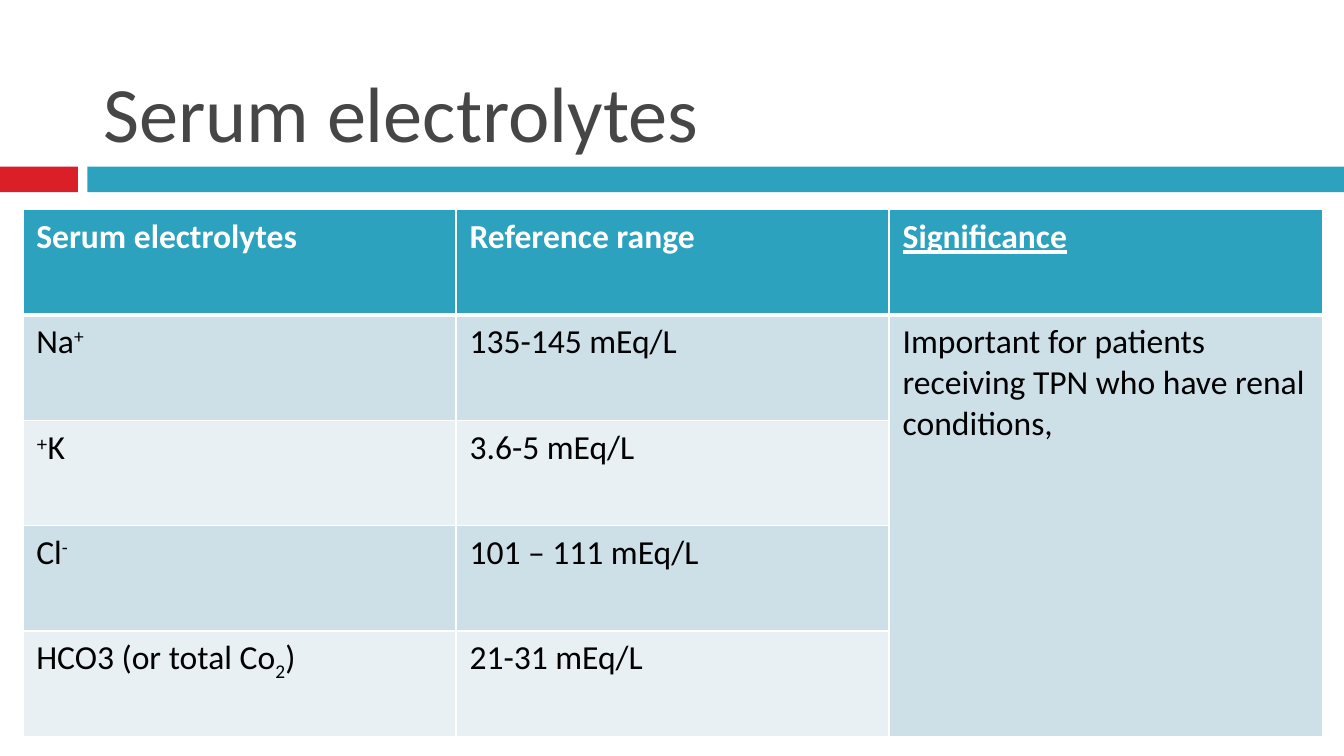
"""Build the serum electrolytes slide with its reference table."""
from lxml import etree
from pptx import Presentation
from pptx.dml.color import RGBColor
from pptx.enum import shapes, text
from pptx.oxml import ns
from pptx.util import Inches, Pt

THEME = {
    "font": "Calibri", "title": 42, "body": 18,
    "red": "DA1F28", "teal": "2DA2BF", "gray": "464646",
    "white": "FFFFFF", "black": "000000",
    "bands": ("CDE0E8", "E8F0F4"),
}
SUP, SUB = 30000, -25000
TITLE = "Serum electrolytes"
HEAD = ["Serum electrolytes", "Reference range", "Significance"]
ROWS = [
    ([("Na", 0), ("+", SUP)], "135-145 mEq/L"),
    ([("K", 0), ("+", SUP)], "3.6-5 mEq/L"),
    ([("Cl", 0), ("-", SUP)], "101 – 111 mEq/L"),
    ([("HCO3 (or total Co", 0), ("2", SUB), (")", 0)], "21-31 mEq/L"),
]
RTL_ROW = 2
NOTE = "Important for patients receiving TPN who have renal conditions,"
BARS = [(0, 0.58, "red"), (0.65, 9.35, "teal")]
TABLE = (0.17, 1.56, 9.67, 3.92)


def rgb(hue):
    return RGBColor.from_string(hue)


def style(run, size, hue, bold=False):
    font = run.font
    font.name, font.size, font.bold = THEME["font"], Pt(size), bold
    font.color.rgb = rgb(hue)


def edge(cell, side, width):
    line = etree.SubElement(cell._tc.get_or_add_tcPr(), ns.qn("a:ln" + side),
                            w=str(Pt(width)))
    fill = etree.SubElement(line, ns.qn("a:solidFill"))
    etree.SubElement(fill, ns.qn("a:srgbClr"), val=THEME["white"])


def put(cell, parts, fill, hue, top, low, bold=False):
    para = cell.text_frame.paragraphs[0]
    for word, base in parts:
        run = para.add_run()
        run.text = word
        style(run, THEME["body"], hue, bold)
        if base:
            run.font._element.set("baseline", str(base))
    for side, width in zip("LRTB", (1, 1, top, low)):
        edge(cell, side, width)
    cell.fill.solid()
    cell.fill.fore_color.rgb = rgb(fill)
    return para


def add_bars(slide):
    for left, width, hue in BARS:
        bar = slide.shapes.add_shape(
            shapes.MSO_SHAPE.RECTANGLE, Inches(left), Inches(1.24),
            Inches(width), Inches(0.19))
        bar.shadow.inherit = False
        bar.fill.solid()
        bar.fill.fore_color.rgb = rgb(THEME[hue])
        bar.line.fill.background()


def add_title(slide):
    box = slide.shapes.add_textbox(*map(Inches, (0.67, 0.13, 8.92, 1.1)))
    frame = box.text_frame
    frame.word_wrap = True
    frame.vertical_anchor = text.MSO_ANCHOR.BOTTOM
    frame.text = TITLE
    style(frame.paragraphs[0].runs[0], THEME["title"], THEME["gray"])


def add_grid(slide):
    count = len(ROWS) + 1
    grid = slide.shapes.add_table(count, len(HEAD), *map(Inches, TABLE)).table
    for col, word in enumerate(HEAD):
        para = put(grid.cell(0, col), [(word, 0)], THEME["teal"],
                   THEME["white"], 1, 3, True)
        para.runs[0].font.underline = word == HEAD[-1]
    for row, (ion, span) in enumerate(ROWS, 1):
        note = [(NOTE, 0)] if row == 1 else []
        band = THEME["bands"][(row - 1) % 2]
        for col, parts in enumerate((ion, [(span, 0)], note)):
            fill = THEME["bands"][0] if col == 2 else band
            para = put(grid.cell(row, col), parts, fill, THEME["black"],
                       3 if row == 1 else 1, 1)
            if (row, col) == (RTL_ROW, 0):
                para.alignment = text.PP_ALIGN.LEFT
                para._p.get_or_add_pPr().set("rtl", "1")
    grid.cell(1, 2).merge(grid.cell(count - 1, 2))


def main():
    deck = Presentation()
    deck.slide_width = Inches(10)
    deck.slide_height = deck.slide_width * 9 // 16
    slide = deck.slides.add_slide(deck.slide_layouts[6])
    add_bars(slide)
    add_title(slide)
    add_grid(slide)
    deck.save("out.pptx")


if __name__ == "__main__":
    main()
